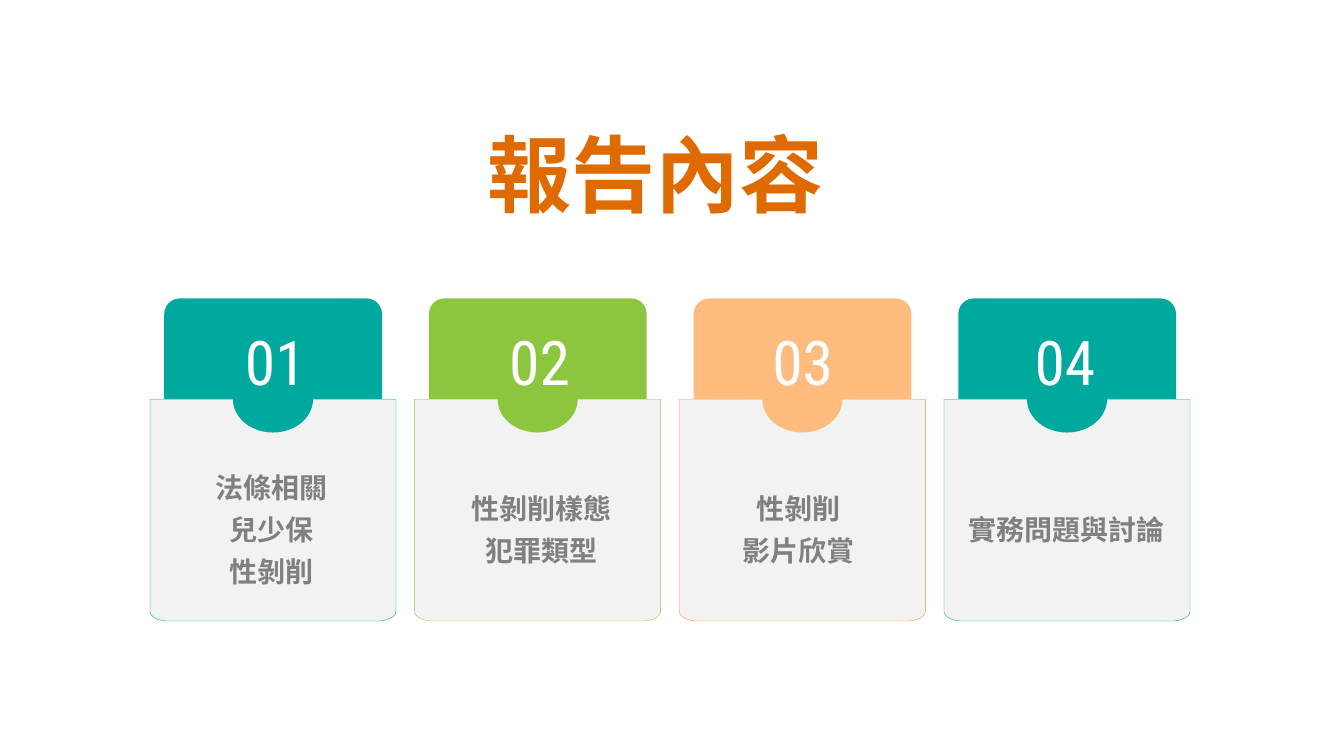
from math import cos, pi, sin

from lxml.etree import SubElement
from pptx import Presentation
from pptx.dml.color import RGBColor
from pptx.enum.shapes import MSO_SHAPE
from pptx.enum.text import MSO_ANCHOR, PP_ALIGN
from pptx.oxml.ns import qn
from pptx.util import Cm, Pt

COLORS = {
    "title": "DE6A00",
    "teal": "00A99D",
    "green": "8CC63F",
    "peach": "FFBC7F",
    "orange": "FF8F29",
    "panel": "F2F2F2",
    "label": "808080",
    "number": "FFFFFF",
}
TITLE_FONT = {"name": "Arial", "size": Pt(60), "bold": True}
NUMBER_FONT = {"name": "Roboto Condensed", "size": Pt(44), "bold": False}
LABEL_FONT = {"name": "Noto Sans CJK SC", "size": Pt(20), "bold": True}


def write_lines(shape, lines, font, color, spacing=None):
    frame = shape.text_frame
    frame.word_wrap = True
    frame.vertical_anchor = MSO_ANCHOR.MIDDLE
    for index, line in enumerate(lines):
        para = frame.paragraphs[0] if index == 0 else frame.add_paragraph()
        para.alignment = PP_ALIGN.CENTER
        if spacing:
            para.line_spacing = spacing
        span = para.add_run()
        span.text = line
        for name, value in font.items():
            setattr(span.font, name, value)
        span.font.color.rgb = RGBColor.from_string(COLORS[color])
        SubElement(span.font._element, qn("a:ea"), typeface=font["name"])


def paint(shape, fill, line=None):
    shape.shadow.inherit = False
    shape.fill.solid()
    shape.fill.fore_color.rgb = RGBColor.from_string(COLORS[fill])
    if line:
        shape.line.color.rgb = RGBColor.from_string(COLORS[line])
        shape.line.width = Pt(0.25)
    else:
        shape.line.fill.background()


deck = Presentation()
deck.slide_width, deck.slide_height = Cm(33.87), Cm(19.05)
page = deck.slides.add_slide(deck.slide_layouts[5])

title = page.shapes.title
placement = {"left": 11.79, "top": 3.07, "width": 9.45, "height": 2.57}
for name, value in placement.items():
    setattr(title, name, Cm(value))
for side in ("left", "top", "right", "bottom"):
    setattr(title.text_frame, f"margin_{side}", 0)
write_lines(title, ["報告內容"], TITLE_FONT, "title")

CARD_LEFT, CARD_PITCH, CARD_WIDTH = 3.78, 6.67, 6.2
PANEL_TOP, PANEL_BOTTOM = 10.06, 15.65
CORNER_WIDTH, CORNER_HEIGHT, CORNER_STEPS = 0.46, 0.25, 12
NUMBER_WIDTH, LABEL_WIDTH, LABEL_MIDDLE = 3, 6.2, 13.24

cards = [
    ("teal", "teal", 3.16, 3.06, ["法條相關", "兒少保", "性剝削"]),
    ("green", "green", 3.15, 3.2, ["性剝削樣態", "犯罪類型"]),
    ("peach", "orange", 3.11, 3.01, ["性剝削", "影片欣賞"]),
    ("teal", "teal", 3.05, 3.08, ["實務問題與討論"]),
]

for index, (color, outline, number_center, label_center, lines) in enumerate(cards):
    left = CARD_LEFT + index * CARD_PITCH
    right = left + CARD_WIDTH
    card = page.shapes.add_group_shape().shapes

    tab = card.add_shape(MSO_SHAPE.ROUNDED_RECTANGLE, Cm(left + 0.36), Cm(7.52), Cm(5.49), Cm(4.22))
    tab.adjustments[0] = 0.093
    paint(tab, color)

    corners = []
    for center, start in ((right - CORNER_WIDTH, 0), (left + CORNER_WIDTH, pi / 2)):
        for step in range(CORNER_STEPS + 1):
            angle = start + step * pi / 2 / CORNER_STEPS
            corners.append((
                Cm(center + CORNER_WIDTH * cos(angle)),
                Cm(PANEL_BOTTOM - CORNER_HEIGHT + CORNER_HEIGHT * sin(angle)),
            ))
    builder = card.build_freeform(Cm(left), Cm(PANEL_TOP))
    builder.add_line_segments([(Cm(right), Cm(PANEL_TOP))] + corners, close=True)
    paint(builder.convert_to_shape(), "panel", outline)

    notch = card.add_shape(MSO_SHAPE.OVAL, Cm(left + 2.09), Cm(9.22), Cm(2.02), Cm(1.68))
    paint(notch, color)

    number = card.add_textbox(
        Cm(left + number_center - NUMBER_WIDTH / 2), Cm(8.03), Cm(NUMBER_WIDTH), Cm(2.13)
    )
    write_lines(number, [f"{index + 1:02}"], NUMBER_FONT, "number")

    height = 1.06 * len(lines) + 0.25
    label = card.add_textbox(
        Cm(left + label_center - LABEL_WIDTH / 2), Cm(LABEL_MIDDLE - height / 2), Cm(LABEL_WIDTH), Cm(height)
    )
    write_lines(label, lines, LABEL_FONT, "label", Pt(30))

deck.save("out.pptx")
